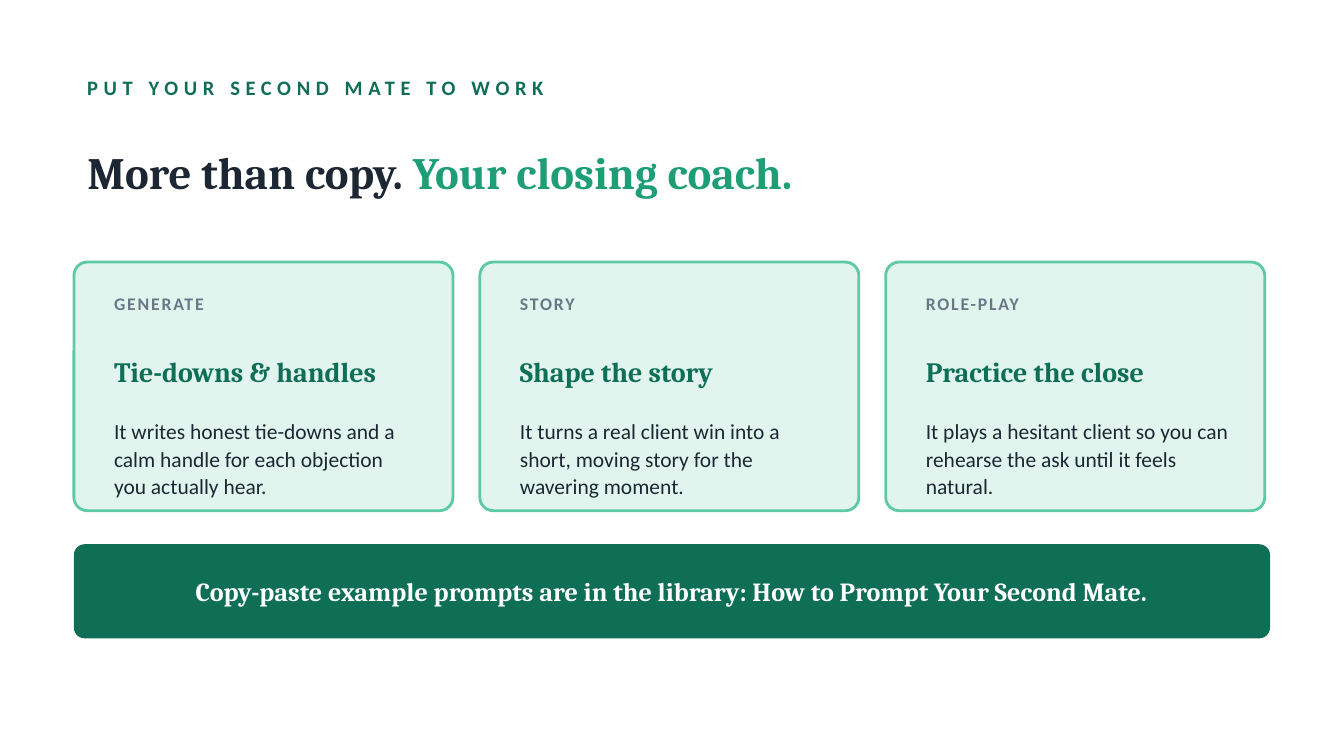
from pptx import Presentation
from pptx.dml.color import RGBColor
from pptx.enum import shapes, text
from pptx.util import Pt

GREEN, BRIGHT_GREEN, MINT, PALE_MINT = "0F6E56", "1D9E75", "5DCAA5", "E1F5EE"
INK, GREY, WHITE = "1C2733", "6B7785", "FFFFFF"
BODY_FONT, HEADING_FONT = "Calibri", "Cambria"

LEFT, CONTENT_WIDTH = 39.6, 640.8
CARD_TOP, CARD_WIDTH, CARD_HEIGHT, CARD_STEP = 140.4, 203.04, 133.2, 217.44
CARD_INSET, CARD_TEXT_WIDTH = 14.4, 176.4

CARDS = [
    ("GENERATE", "Tie-downs & handles",
     "It writes honest tie-downs and a calm handle for each objection you actually hear."),
    ("STORY", "Shape the story",
     "It turns a real client win into a short, moving story for the wavering moment."),
    ("ROLE-PLAY", "Practice the close",
     "It plays a hesitant client so you can rehearse the ask until it feels natural."),
]


def color(code):
    return RGBColor.from_string(code)


def format_span(span, size, font, code, bold=True, spacing=0):
    """Style a run; spacing is the letter spacing in points."""
    span.font.size = Pt(size)
    span.font.name = font
    span.font.bold = bold
    span.font.color.rgb = color(code)
    if spacing:
        span._r.get_or_add_rPr().set("spc", str(spacing * 100))


def prepare_frame(frame, align):
    frame.word_wrap = True
    frame.auto_size = text.MSO_AUTO_SIZE.NONE
    frame.vertical_anchor = text.MSO_ANCHOR.MIDDLE
    frame.paragraphs[0].alignment = align


def add_text(page, area, words, size, font, code, bold=True, spacing=0,
             align=text.PP_ALIGN.LEFT, line_spacing=None):
    box = page.shapes.add_textbox(*map(Pt, area))
    box.text_frame.text = words
    prepare_frame(box.text_frame, align)
    para = box.text_frame.paragraphs[0]
    para.line_spacing = line_spacing
    format_span(para.runs[0], size, font, code, bold, spacing)


def add_panel(page, area, radius, fill, line=None):
    """Add a rounded rectangle; radius is a share of its shorter side."""
    panel = page.shapes.add_shape(shapes.MSO_SHAPE.ROUNDED_RECTANGLE, *map(Pt, area))
    panel.adjustments[0] = radius
    panel.shadow.inherit = False
    panel.fill.solid()
    panel.fill.fore_color.rgb = color(fill)
    if line:
        panel.line.color.rgb = color(line)
        panel.line.width = Pt(1.5)
    else:
        panel.line.fill.background()


def set_title(page, area, parts):
    """Fill the title with (words, colour) parts."""
    title = page.shapes.title
    title.left, title.top, title.width, title.height = map(Pt, area)
    prepare_frame(title.text_frame, text.PP_ALIGN.LEFT)
    para = title.text_frame.paragraphs[0]
    for words, code in parts:
        span = para.add_run()
        span.text = words
        format_span(span, 24, HEADING_FONT, code)


def add_card(page, left, label, heading, body):
    add_panel(page, (left, CARD_TOP, CARD_WIDTH, CARD_HEIGHT), 0.054, PALE_MINT, MINT)

    def area(offset, height):
        return left + CARD_INSET, CARD_TOP + offset, CARD_TEXT_WIDTH, height

    add_text(page, area(11.52, 21.6), label, 9.5, BODY_FONT, GREY, spacing=1)
    add_text(page, area(33.12, 50.4), heading, 15, HEADING_FONT, GREEN)
    add_text(page, area(84.96, 39.6), body, 11.5, BODY_FONT, INK,
             bold=False, line_spacing=1.08)


def main():
    deck = Presentation()
    deck.slide_width, deck.slide_height = Pt(720), Pt(405)
    page = deck.slides.add_slide(deck.slide_layouts.get_by_name("Title Only"))
    page.background.fill.solid()
    page.background.fill.fore_color.rgb = color(WHITE)

    add_text(page, (LEFT, 36, CONTENT_WIDTH, 21.6), "PUT YOUR SECOND MATE TO WORK",
             11, BODY_FONT, GREEN, spacing=3)
    set_title(page, (LEFT, 61.2, CONTENT_WIDTH, 61.2),
              [("More than copy. ", INK), ("Your closing coach.", BRIGHT_GREEN)])

    for index, card in enumerate(CARDS):
        add_card(page, LEFT + index * CARD_STEP, *card)

    add_panel(page, (LEFT, 291.6, CONTENT_WIDTH, 50.4), 0.114, GREEN)
    add_text(page, (57.6, 291.6, 604.8, 50.4),
             "Copy-paste example prompts are in the library: How to Prompt Your Second Mate.",
             14, HEADING_FONT, WHITE, align=text.PP_ALIGN.CENTER)

    deck.save("out.pptx")


if __name__ == "__main__":
    main()
